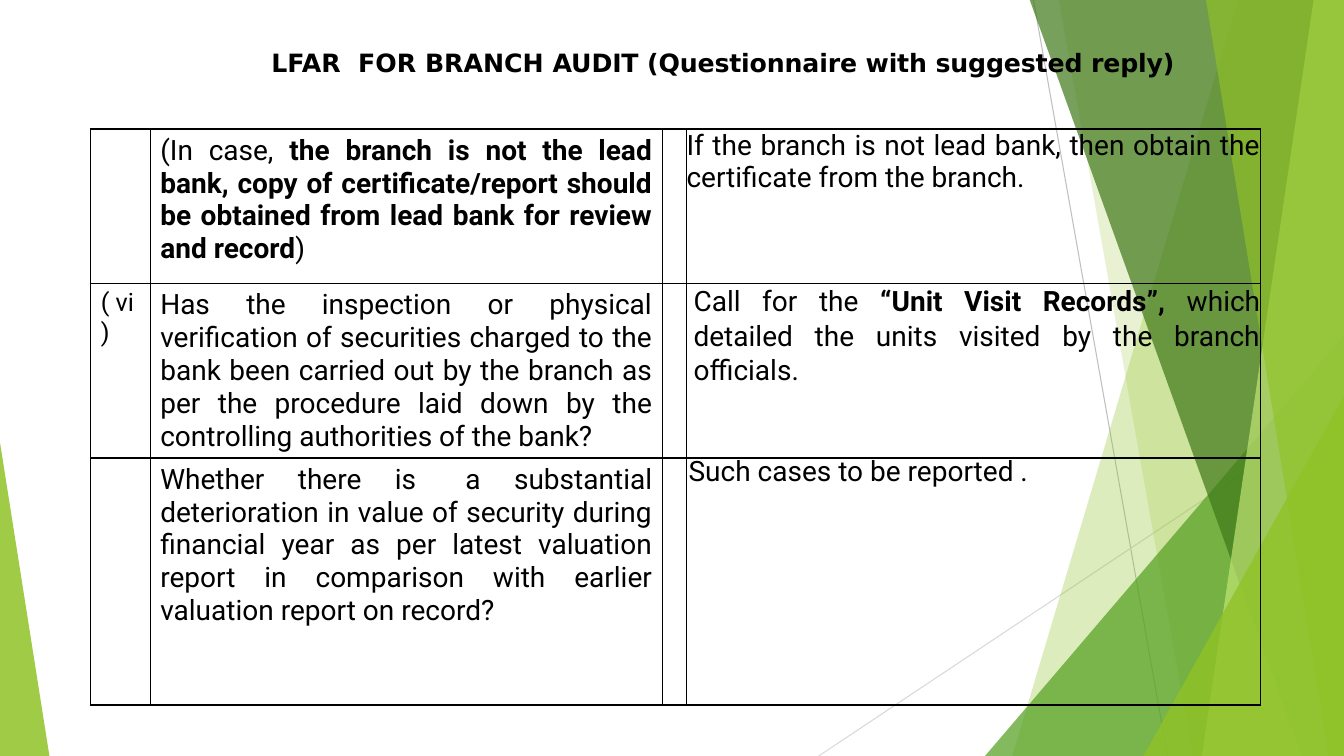
from dataclasses import dataclass

from lxml.etree import SubElement
from pptx import Presentation
from pptx.dml.color import RGBColor
from pptx.enum.shapes import MSO_CONNECTOR, MSO_SHAPE
from pptx.enum.text import MSO_ANCHOR, MSO_AUTO_SIZE, PP_ALIGN
from pptx.oxml import parse_xml
from pptx.oxml.ns import nsdecls, qn
from pptx.util import Emu, Pt

SCALE = 9144  # EMU in one px, 100 px to the inch
WIDE, HIGH = 1333, 750


@dataclass(frozen=True)
class Theme:
    ink: str = "000000"
    lime: str = "90C226"
    green: str = "54A021"
    dark: str = "3F7819"
    pale: str = "C0E474"
    grey: str = "BFBFBF"
    mist: str = "D9D9D9"
    head: str = "DejaVu Sans"
    body: str = "Roboto"
    small: int = 18
    large: int = 20
    hair: float = 0.75
    rule: int = 1


THEME = Theme()


@dataclass(frozen=True)
class Ray:
    start: tuple[int, int]
    end: tuple[int, int]
    color: str


@dataclass(frozen=True)
class Wedge:
    """A band from a slanted left edge to the right side of the slide."""
    top: int
    base: int
    color: str
    alpha: int


@dataclass(frozen=True)
class Peak:
    """A triangle standing on the bottom of the slide."""
    left: int
    top: int
    width: int
    tip: int
    color: str
    alpha: int


@dataclass(frozen=True)
class Span:
    text: str
    bold: bool = False
    track: int = 0


@dataclass(frozen=True)
class Entry:
    row: int
    col: int
    spans: tuple[Span, ...]
    size: int = THEME.large
    align: PP_ALIGN = PP_ALIGN.JUSTIFY
    flush: bool = False
    top: int = 0
    indent: int = 0
    lead: float | Pt | None = None


RAYS = (
    Ray((1025, 0), (1158, HIGH), THEME.grey),
    Ray((WIDE, 403), (812, HIGH), THEME.mist),
)
PANES = (
    Wedge(1228, 1004, THEME.lime, 30),
    Wedge(1050, 1183, THEME.lime, 20),
    Peak(977, 333, 356, 1, THEME.green, 72),
    Wedge(1021, 1291, THEME.dark, 70),
    Wedge(1303, 1192, THEME.pale, 70),
    Wedge(1196, 1318, THEME.lime, 65),
    Peak(1134, 393, 199, 1, THEME.lime, 80),
    Peak(0, 439, 49, 0, THEME.lime, 85),
)
TITLE = (
    Span("LFAR  FOR BRANCH ", True),
    Span("AUDIT (Questionnaire with suggested reply)", True, -10),
)
COLS = (59, 508, 23, 569)
ROWS = (153, 171, 245)
ENTRIES = (
    Entry(0, 1, (
        Span("(In case, "),
        Span("the branch is not the lead bank, copy of certificate/report should "
             "be obtained from lead bank for review and record", True),
        Span(")"))),
    Entry(0, 3, (Span("If the branch is not lead bank, then obtain the "
                      "certificate from the branch."),), flush=True),
    Entry(1, 0, (Span("( vi)"),), THEME.small, PP_ALIGN.LEFT),
    Entry(1, 1, (Span("Has the inspection or physical verification of securities "
                      "charged to the bank been carried out by the branch as per the "
                      "procedure laid down by the controlling authorities of the bank?"),)),
    Entry(1, 3, (
        Span("Call for the "),
        Span("“Unit Visit Records”,", True),
        Span(" which detailed the units visited by the branch officials.")),
        flush=True, indent=7, lead=1.06),
    Entry(2, 1, (Span("Whether there is\ta substantial deterioration in value of security "
                      "during financial year as per latest valuation report in comparison "
                      "with earlier valuation report on record?"),)),
    Entry(2, 3, (Span("Such cases to be reported ."),),
          flush=True, top=15, indent=2, lead=Pt(10.8)),
)


def px(size: int) -> Emu:
    return Emu(size * SCALE)


def draw_ray(shapes, ray: Ray) -> None:
    line = shapes.add_connector(MSO_CONNECTOR.STRAIGHT,
                                *map(px, ray.start + ray.end))
    line.line.color.rgb = RGBColor.from_string(ray.color)
    line.line.width = Pt(THEME.hair)
    SubElement(line._element.spPr, qn("a:effectLst"))


def draw_pane(shapes, pane: Wedge | Peak) -> None:
    if isinstance(pane, Wedge):
        pen = shapes.build_freeform(pane.top, -1, scale=SCALE)
        pen.add_line_segments([(WIDE, -1), (WIDE, HIGH), (pane.base, HIGH)])
        shape = pen.convert_to_shape()
    else:
        box = (pane.left, pane.top, pane.width, HIGH - pane.top)
        shape = shapes.add_shape(MSO_SHAPE.ISOSCELES_TRIANGLE, *map(px, box))
        shape.adjustments[0] = pane.tip
    shape.shadow.inherit = False
    shape.line.fill.background()
    shape.fill.solid()
    shape.fill.fore_color.rgb = RGBColor.from_string(pane.color)
    tint = shape._element.spPr.find(".//" + qn("a:srgbClr"))
    SubElement(tint, qn("a:alpha")).set("val", str(pane.alpha * 1000))


def write(para, spans: tuple[Span, ...], face: str, size: int, indent: int) -> None:
    props = para._p.get_or_add_pPr()
    props.set("marL", str(px(indent)))
    props.set("indent", "0")
    for span in spans:
        run = para.add_run()
        run.text = span.text
        font = run.font
        font.name, font.size, font.bold = face, Pt(size), span.bold
        font.color.rgb = RGBColor.from_string(THEME.ink)
        if span.track:
            run._r.get_or_add_rPr().set("spc", str(span.track))


def draw_title(slide) -> None:
    title = slide.shapes.title
    title.left, title.top, title.width, title.height = map(px, (211, 47, 1038, 40))
    frame = title.text_frame
    frame.word_wrap = True
    frame.auto_size = MSO_AUTO_SIZE.NONE
    frame.vertical_anchor = MSO_ANCHOR.TOP
    frame.margin_left = frame.margin_top = frame.margin_bottom = 0
    frame.margin_right = px(28)
    para = frame.paragraphs[0]
    para.alignment = PP_ALIGN.CENTER
    para.space_before = Pt(4.2)
    write(para, TITLE, THEME.head, THEME.small, 2)
    slide.shapes._spTree.append(title._element)  # in front of the panes


def rule_cell(cell) -> None:
    cell.fill.background()
    props = cell._tc.get_or_add_tcPr()
    for place, side in enumerate("LRTB"):
        props.insert(place, parse_xml(
            f'<a:ln{side} {nsdecls("a")} w="{Pt(THEME.rule)}"><a:solidFill>'
            f'<a:srgbClr val="{THEME.ink}"/></a:solidFill></a:ln{side}>'))


def draw_table(shapes) -> None:
    box = (90, 128, sum(COLS), sum(ROWS))
    table = shapes.add_table(len(ROWS), len(COLS), *map(px, box)).table
    table.first_row = table.horz_banding = False
    for col, width in zip(table.columns, COLS):
        col.width = px(width)
    for row, height in zip(table.rows, ROWS):
        row.height = px(height)
    for cell in table.iter_cells():
        rule_cell(cell)
    for entry in ENTRIES:
        cell = table.cell(entry.row, entry.col)
        if entry.flush:
            cell.margin_left = cell.margin_right = cell.margin_bottom = 0
            cell.margin_top = px(entry.top)
        para = cell.text_frame.paragraphs[0]
        para.alignment = entry.align
        para.line_spacing = entry.lead
        write(para, entry.spans, THEME.body, entry.size, entry.indent)


def main() -> None:
    deck = Presentation()
    deck.slide_width, deck.slide_height = px(WIDE), px(HIGH)
    slide = deck.slides.add_slide(deck.slide_layouts[5])
    # Backdrop
    for ray in RAYS:
        draw_ray(slide.shapes, ray)
    for pane in PANES:
        draw_pane(slide.shapes, pane)
    # Content
    draw_title(slide)
    draw_table(slide.shapes)
    deck.save("out.pptx")


if __name__ == "__main__":
    main()
